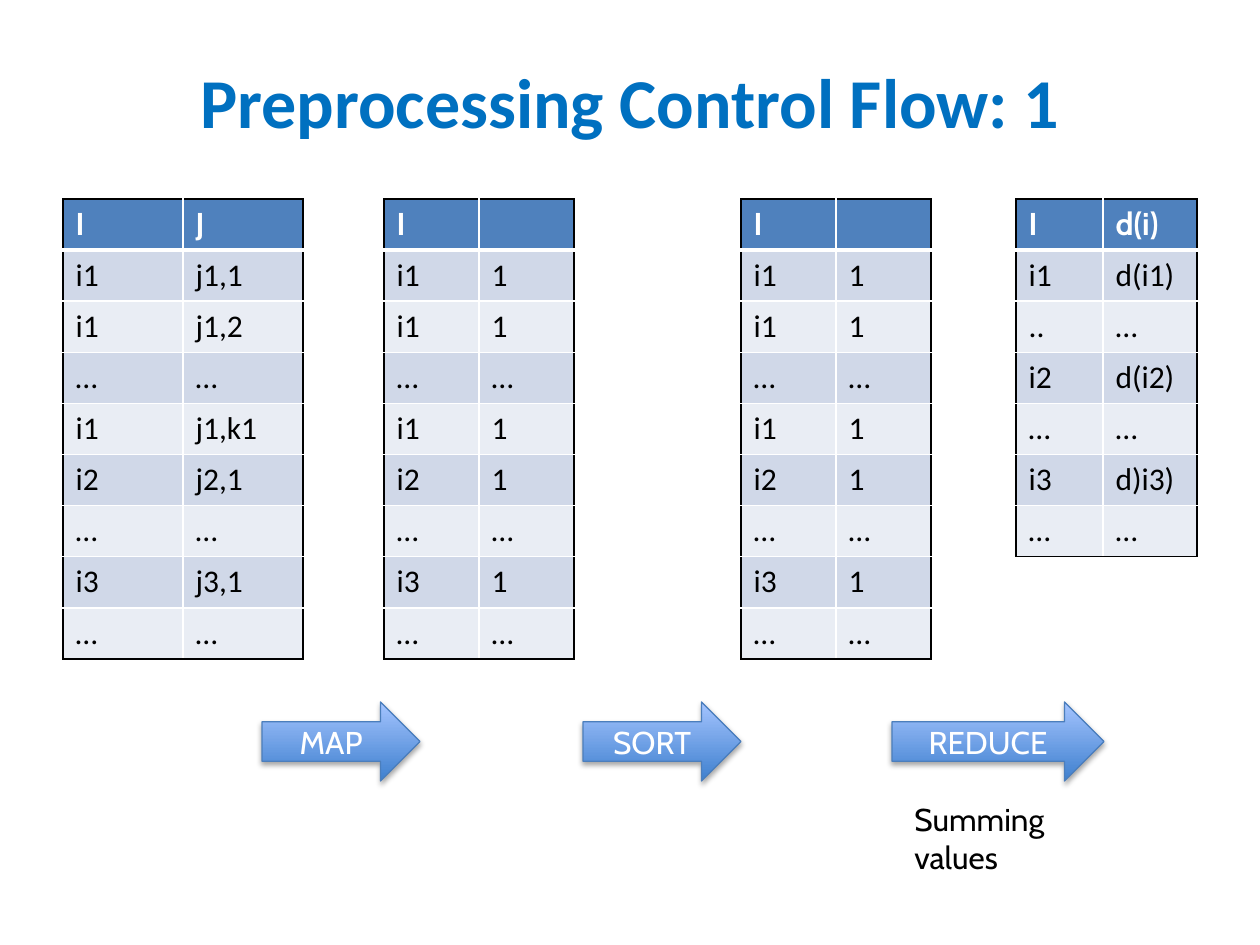
"""Build the slide that shows the map, sort and reduce steps of preprocessing."""
import dataclasses
import typing

import lxml.etree
import pptx
import pptx.dml.color
import pptx.enum.shapes
import pptx.enum.text
import pptx.oxml.ns
import pptx.util

PX = 914400 / 126
TABLE_TOP, ROW_HEIGHT = 199, 51
ARROW_TOP, ARROW_HEIGHT = 702, 79
WHITE, BLACK = "FFFFFF", "000000"
HEADER_FILL, BAND_FILLS = "4F81BD", ("D0D8E8", "E9EDF4")


@dataclasses.dataclass(frozen=True)
class Grid:
    """One table of two columns."""
    left: int
    widths: tuple[int, int]
    rows: list[tuple[str, str]]


@dataclasses.dataclass(frozen=True)
class Step:
    """One labelled arrow."""
    label: str
    left: int
    width: int


KEYS = ["i1", "i1", "…", "i1", "i2", "…", "i3", "…"]
PAIRS = ["j1,1", "j1,2", "…", "j1,k1", "j2,1", "…", "j3,1", "…"]
ONES = [("I", "")] + [(key, "…" if key == "…" else "1") for key in KEYS]
DEGREES = [("I", "d(i)"), ("i1", "d(i1)"), ("..", "…"), ("i2", "d(i2)"),
           ("…", "…"), ("i3", "d)i3)"), ("…", "…")]

GRIDS = [
    Grid(63, (120, 120), [("I", "J"), *zip(KEYS, PAIRS)]),
    Grid(384, (95, 95), ONES),
    Grid(741, (95, 95), ONES),
    Grid(1016, (87, 94), DEGREES),
]
STEPS = [Step("MAP", 262, 158), Step("SORT", 583, 158), Step("REDUCE", 892, 212)]


def px(length: int) -> pptx.util.Emu:
    """Turn pixels into EMU."""
    return pptx.util.Emu(round(length * PX))


def rgb(value: str) -> pptx.dml.color.RGBColor:
    """Turn a hex string into a colour."""
    return pptx.dml.color.RGBColor.from_string(value)


def add_element(parent: typing.Any, tag: str, **attributes: str) -> typing.Any:
    """Append a DrawingML element to a parent."""
    return lxml.etree.SubElement(parent, pptx.oxml.ns.qn(tag), attributes)


def write(frame: typing.Any, text: str, font: str, size: int, color: str,
          bold: bool = False, align: typing.Any = None) -> None:
    """Set the text of a frame and format its runs."""
    frame.text = text
    for para in frame.paragraphs:
        para.alignment = align
        for span in para.runs:
            span.font.name = font
            span.font.size = pptx.util.Pt(size)
            span.font.bold = bold
            span.font.color.rgb = rgb(color)


def draw_border(cell: typing.Any, side: str, color: str, points: int) -> None:
    """Draw one edge of a table cell."""
    line = add_element(cell._tc.get_or_add_tcPr(), f"a:ln{side}",
                       w=str(pptx.util.Pt(points)))
    add_element(add_element(line, "a:solidFill"), "a:srgbClr", val=color)


def draw_grid(page: typing.Any, grid: Grid) -> None:
    """Draw a banded table with a black outline."""
    last = len(grid.rows) - 1
    table = page.shapes.add_table(
        len(grid.rows), 2, px(grid.left), px(TABLE_TOP),
        px(sum(grid.widths)), px(ROW_HEIGHT * len(grid.rows))).table
    for column, width in zip(table.columns, grid.widths):
        column.width = px(width)
    for row, texts in enumerate(grid.rows):
        header = row == 0
        for column, text in enumerate(texts):
            cell = table.cell(row, column)
            draw_border(cell, "L", WHITE if column else BLACK, 1)
            draw_border(cell, "R", BLACK if column else WHITE, 1)
            draw_border(cell, "T", BLACK if header else WHITE, 1)
            draw_border(cell, "B", BLACK if row == last else WHITE, 3 if header else 1)
            cell.fill.solid()
            cell.fill.fore_color.rgb = rgb(HEADER_FILL if header else BAND_FILLS[(row - 1) % 2])
            write(cell.text_frame, text, "Cabin" if header else "Calibri", 18,
                  WHITE if header else BLACK, bold=header)


def draw_step(page: typing.Any, step: Step) -> None:
    """Draw a shaded arrow with its label."""
    arrow = page.shapes.add_shape(
        pptx.enum.shapes.MSO_SHAPE.RIGHT_ARROW, px(step.left), px(ARROW_TOP),
        px(step.width), px(ARROW_HEIGHT))
    arrow.fill.gradient()
    arrow.fill.gradient_angle = 90
    for stop, position, color in zip(arrow.fill.gradient_stops, (0, 1), ("3F80CE", "A4C4FF")):
        stop.position = position
        stop.color.rgb = rgb(color)
    arrow.line.color.rgb = rgb("4B7EBC")
    arrow.line.width = pptx.util.Pt(0.75)
    arrow.shadow.inherit = False
    effects = arrow._element.spPr.find(pptx.oxml.ns.qn("a:effectLst"))
    shadow = add_element(effects, "a:outerShdw", blurRad="40000", dist="23000",
                         dir="5400000", rotWithShape="0")
    add_element(add_element(shadow, "a:srgbClr", val=BLACK), "a:alpha", val="35000")
    arrow.text_frame.vertical_anchor = pptx.enum.text.MSO_ANCHOR.MIDDLE
    write(arrow.text_frame, step.label, "Cabin", 18, WHITE,
          align=pptx.enum.text.PP_ALIGN.CENTER)


def draw_title(page: typing.Any) -> None:
    """Place and format the title."""
    title = page.shapes.title
    title.left, title.top, title.width, title.height = map(px, (63, 38, 1134, 125))
    title.text_frame.vertical_anchor = pptx.enum.text.MSO_ANCHOR.MIDDLE
    write(title.text_frame, "Preprocessing Control Flow: 1", "Calibri", 40, "0070C0",
          bold=True, align=pptx.enum.text.PP_ALIGN.CENTER)


def draw_note(page: typing.Any) -> None:
    """Write the note below the reduce arrow."""
    box = page.shapes.add_textbox(*map(px, (902, 794, 228, 50)))
    box.text_frame.word_wrap = True
    write(box.text_frame, "Summing values", "Cabin", 18, BLACK)


def main() -> None:
    """Build and save the deck."""
    deck = pptx.Presentation()
    deck.slide_width, deck.slide_height = px(1260), px(945)
    page = deck.slides.add_slide(deck.slide_layouts[5])
    draw_title(page)
    for grid in GRIDS:
        draw_grid(page, grid)
    for step in STEPS:
        draw_step(page, step)
    draw_note(page)
    deck.save("out.pptx")


if __name__ == "__main__":
    main()
